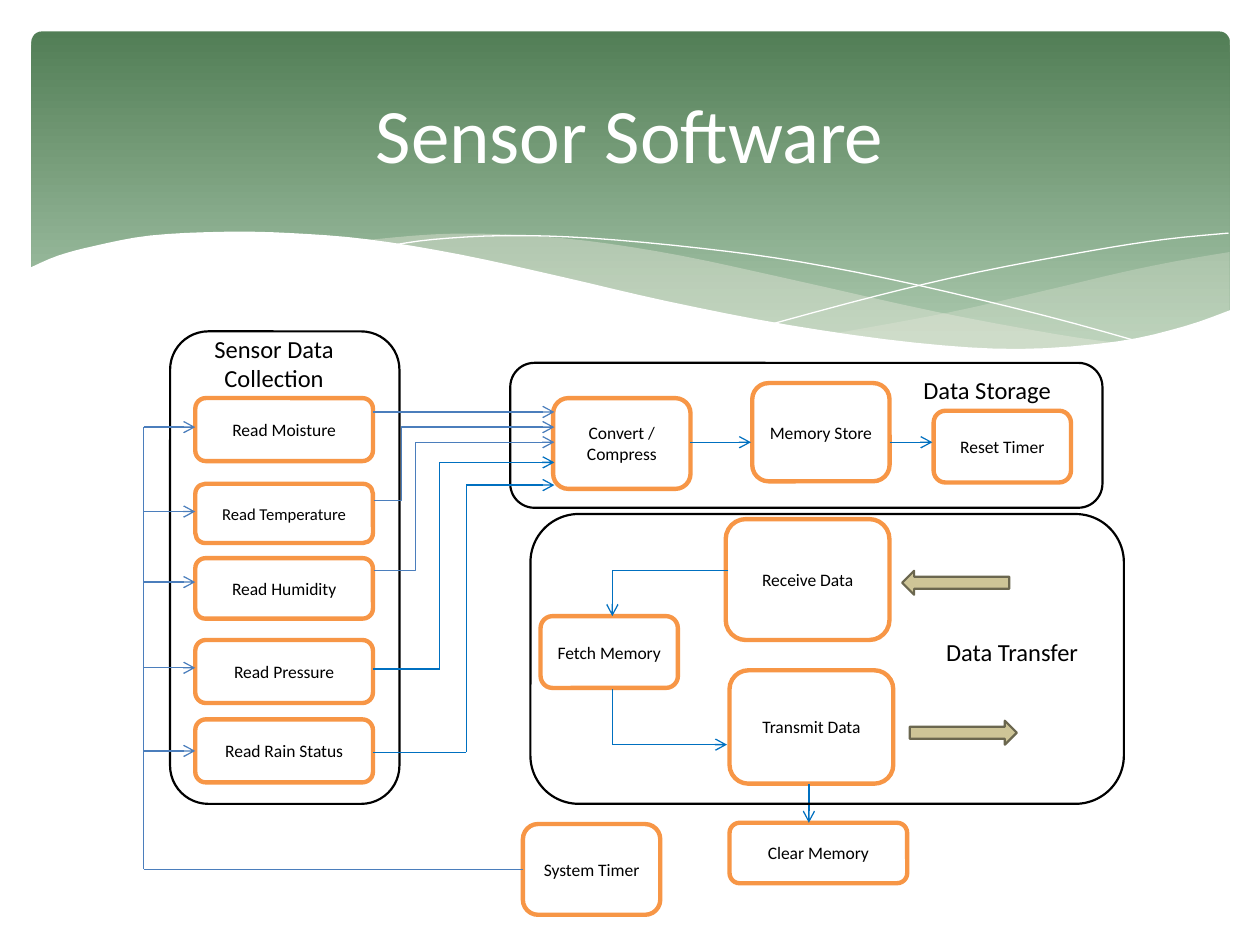
from lxml import etree
from pptx import Presentation
from pptx.dml.color import RGBColor
from pptx.enum.shapes import MSO_CONNECTOR, MSO_SHAPE
from pptx.enum.text import MSO_ANCHOR, MSO_AUTO_SIZE, PP_ALIGN
from pptx.oxml.ns import qn
from pptx.util import Inches, Pt

ROUNDED, ARROW = MSO_SHAPE.ROUNDED_RECTANGLE, MSO_SHAPE.RIGHT_ARROW
STRAIGHT, ELBOW = MSO_CONNECTOR.STRAIGHT, MSO_CONNECTOR.ELBOW
MIDDLE, GROW = MSO_ANCHOR.MIDDLE, MSO_AUTO_SIZE.SHAPE_TO_FIT_TEXT
CENTER, LEFT = PP_ALIGN.CENTER, PP_ALIGN.LEFT

WHITE = RGBColor(0xFF, 0xFF, 0xFF)
BLACK = RGBColor(0, 0, 0)
DARK_GREEN = RGBColor(0x52, 0x7E, 0x56)
LIGHT_GREEN = RGBColor(0xAA, 0xC8, 0xAD)
MIST = RGBColor(0xEA, 0xEB, 0xDE)
ORANGE = RGBColor(0xF7, 0x96, 0x46)
STEEL = RGBColor(0x4B, 0x7E, 0xBC)
BLUE = RGBColor(0, 0x70, 0xC0)
SAND = RGBColor(0xCE, 0xC5, 0x97)
OLIVE = RGBColor(0x6B, 0x67, 0x4F)

# Edges of the header waves, as knots of smooth curves
PALE_TOP = [(9.76, 2), (9.35, 2.07), (8.91, 2.16), (8.32, 2.3), (7.53, 2.48), (6.61, 2.65)]
PALE_BOTTOM = [(6.61, 2.65), (7.05, 2.71), (7.57, 2.76), (8.14, 2.78), (8.63, 2.75),
               (9.05, 2.69), (9.42, 2.59), (9.76, 2.47)]
BROAD_TOP = [(8.93, 2.73), (8.37, 2.65), (7.41, 2.47), (6.29, 2.22), (5.41, 2.03),
             (4.65, 1.91), (3.99, 1.86), (3.44, 1.86), (2.86, 1.91)]
BROAD_BOTTOM = [(2.86, 1.91), (3.62, 2.03), (4.49, 2.22), (5.3, 2.4), (6.18, 2.58),
                (6.95, 2.7), (7.61, 2.77), (8.28, 2.78), (8.93, 2.73)]
FALLING = [(3.09, 1.95), (3.44, 1.9), (4.01, 1.87), (4.69, 1.89), (5.56, 1.97),
           (6.36, 2.08), (7.27, 2.26), (8.31, 2.51), (9.07, 2.72)]
RISING = [(6.13, 2.57), (6.95, 2.35), (7.76, 2.16), (8.66, 1.99), (9.24, 1.9), (9.75, 1.85)]
PAGE_EDGE = [(9.77, 2.46), (9.4, 2.59), (8.87, 2.71), (8.09, 2.77), (7.26, 2.72),
             (6.26, 2.58), (5.29, 2.39), (4.47, 2.2), (3.65, 2.02), (2.92, 1.9),
             (2.3, 1.85), (1.77, 1.84), (1.19, 1.87), (0.76, 1.95), (0.46, 2.03), (0.23, 2.13)]


def smooth(knots, steps=4):
    """Catmull-Rom curve through the knots."""
    ends = [knots[0], *knots, knots[-1]]
    curve = [knots[0]]
    for a, b, c, d in zip(ends, ends[1:], ends[2:], ends[3:]):
        for step in range(1, steps + 1):
            t = step / steps
            curve.append(tuple(
                (2 * q + (r - p) * t + (2 * p - 5 * q + 4 * r - s) * t ** 2
                 + (3 * q - p - 3 * r + s) * t ** 3) / 2
                for p, q, r, s in zip(a, b, c, d)))
    return curve


def add_wave(slide, box, points, fill=None, opacity=100):
    points = [(Inches(x), Inches(y)) for x, y in points]
    builder = slide.shapes.build_freeform(*points[0], scale=1.0)
    builder.add_line_segments(points[1:], close=fill is not None)
    wave = builder.convert_to_shape(Inches(box[0]), Inches(box[1]))
    wave.shadow.inherit = False
    if fill is None:
        wave.fill.background()
        wave.line.color.rgb = WHITE
        wave.line.width = Pt(0)
        return
    wave.fill.solid()
    wave.fill.fore_color.rgb = fill
    wave.line.fill.background()
    if opacity < 100:
        color = wave.fill._xPr.find(".//" + qn("a:srgbClr"))
        etree.SubElement(color, qn("a:alpha"), val=str(opacity * 1000))


def add_block(slide, box, left, top, width, height, fill, line, weight, kind=ROUNDED):
    block = slide.shapes.add_shape(kind, Inches(box[0] + left), Inches(box[1] + top),
                                   Inches(width), Inches(height))
    block.shadow.inherit = False
    if fill is None:
        block.fill.background()
    else:
        block.fill.solid()
        block.fill.fore_color.rgb = fill
    block.line.color.rgb = line
    block.line.width = Pt(weight)
    return block


def write(frame, text, size, color, align=CENTER):
    frame.text = text
    for paragraph in frame.paragraphs:
        paragraph.alignment = align
        paragraph.font.name = "Calibri"
        paragraph.font.size = Pt(size)
        paragraph.font.color.rgb = color


def add_step(slide, box, text, left, top, width=1.09, height=0.72, size=10):
    step = add_block(slide, box, left, top, width, height, WHITE, ORANGE, 2.5)
    step.text_frame.vertical_anchor = MIDDLE
    write(step.text_frame, text, size, BLACK)


def add_frame(slide, box):
    add_block(slide, box, 0, 0, box[2], box[3], None, BLACK, 1.25)


def add_label(slide, box, text, left, top, width, height=0.34, align=LEFT):
    label = slide.shapes.add_textbox(Inches(box[0] + left), Inches(box[1] + top),
                                     Inches(width), Inches(height))
    label.text_frame.word_wrap = False
    label.text_frame.auto_size = GROW
    write(label.text_frame, text, 14, BLACK, align)


def add_link(slide, box, start, end, color, arrow=True, bend=None):
    ends = [Inches(box[i] + point[i]) for point in (start, end) for i in (0, 1)]
    link = slide.shapes.add_connector(STRAIGHT if bend is None else ELBOW, *ends)
    link.line.color.rgb = color
    link.line.width = Pt(0.75)
    properties = link._element.spPr
    if arrow:
        etree.SubElement(link.line._get_or_add_ln(), qn("a:tailEnd"), type="arrow")
    etree.SubElement(properties, qn("a:effectLst"))
    if bend is not None:
        guides = properties.find(qn("a:prstGeom")).get_or_add_avLst()
        etree.SubElement(guides, qn("a:gd"), name="adj1", fmla=f"val {round(bend * 100000)}")


def add_route(slide, box, points, color, arrow=True):
    """Straight links from point to point, with the arrowhead on the last."""
    for i in range(1, len(points)):
        add_link(slide, box, points[i - 1], points[i], color, arrow and i == len(points) - 1)


def draw_header(slide, box):
    banner = add_block(slide, box, 0.25, 0.25, 9.51, 2.7, WHITE, WHITE, 0)
    banner.adjustments[0] = 0.03
    banner.line.fill.background()
    banner.fill.gradient()
    banner.fill.gradient_angle = 270
    for stop, place, color in zip(banner.fill.gradient_stops, (0, 0.9), (DARK_GREEN, LIGHT_GREEN)):
        stop.position = place
        stop.color.rgb = color
    add_wave(slide, box, smooth(PALE_TOP) + smooth(PALE_BOTTOM), MIST, 29)
    add_wave(slide, box, smooth(BROAD_TOP) + smooth(BROAD_BOTTOM), MIST, 40)
    add_wave(slide, box, smooth(FALLING))
    add_wave(slide, box, smooth(RISING))
    add_wave(slide, box, smooth(PAGE_EDGE) + [(0.23, 3.29), (9.77, 3.29)], WHITE)
    title = slide.shapes.add_textbox(Inches(box[0] + 0.5), Inches(box[1] + 0.37),
                                     Inches(9), Inches(1.37))
    title.text_frame.word_wrap = True
    title.text_frame.vertical_anchor = MIDDLE
    write(title.text_frame, "Sensor Software", 44, WHITE)


def draw_collection(slide, box):
    for text, top, height, size in [
            ("Read Moisture", 0.53, 0.5, 10), ("Read Temperature", 1.21, 0.47, 9.5),
            ("Read Humidity", 1.8, 0.48, 10), ("Read Pressure", 2.45, 0.5, 10),
            ("Read Rain Status", 3.08, 0.5, 10)]:
        add_step(slide, box, text, 0.2, top, 1.41, height, size)
    add_frame(slide, box)
    add_label(slide, box, "Sensor Data\nCollection", 0.2, -0.03, 1.25, 0.57, CENTER)


def draw_storage(slide, box):
    add_step(slide, box, "Convert / Compress", 0.34, 0.28)
    add_step(slide, box, "Memory Store", 1.92, 0.16, height=0.78)
    add_step(slide, box, "Reset Timer", 3.36, 0.38, height=0.57)
    for start, end in [(1.43, 1.91), (3.01, 3.35)]:
        add_link(slide, box, (start, 0.63), (end, 0.63), BLUE)
    add_frame(slide, box)
    add_label(slide, box, "Data Storage", 3.18, 0.05, 1.29)


def draw_transfer(slide, box):
    add_step(slide, box, "Receive Data", 1.55, 0.04, 1.3, 0.96)
    add_step(slide, box, "Fetch Memory", 0.08, 0.81, height=0.57)
    add_step(slide, box, "Transmit Data", 1.58, 1.24, 1.3, 0.9)
    add_step(slide, box, "Clear Memory", 1.58, 2.45, 1.41, 0.48)
    add_route(slide, box, [(1.57, 0.45), (0.65, 0.45), (0.65, 0.81)], BLUE)
    add_route(slide, box, [(0.65, 1.39), (0.65, 1.83), (1.56, 1.83)], BLUE)
    add_link(slide, box, (2.21, 2.14), (2.21, 2.45), BLUE)
    for left, top, turn in [(2.95, 0.45, 180), (3.01, 1.64, 0)]:
        add_block(slide, box, left, top, 0.85, 0.19, SAND, OLIVE, 1.25, ARROW).rotation = turn
    add_frame(slide, box)
    add_label(slide, box, "Data Transfer", 3.2, 0.93, 1.32)


def draw_readings(slide, box):
    """Links from the sensors to the converter."""
    right = box[2]
    add_link(slide, box, (0, 0), (right, 0), STEEL)
    add_link(slide, box, (0.01, 0.7), (right, 0.12), STEEL, bend=0.15)
    add_link(slide, box, (0.01, 1.26), (right, 0.24), STEEL, bend=0.23)
    for start, turn, end in [(2.04, 0.53, 0.4), (2.7, 0.74, 0.58)]:
        add_route(slide, box, [(0, start), (turn, start), (turn, end), (right, end)], BLUE)


def draw_timer(slide, box):
    add_step(slide, box, "System Timer", 3.01, 3.15)
    add_route(slide, box, [(3.01, 3.51), (0, 3.51), (0, 0)], STEEL, arrow=False)
    for y in (0, 0.67, 1.23, 1.91, 2.57):
        add_link(slide, box, (0, y), (0.41, y), STEEL)


def main():
    deck = Presentation()
    deck.slide_width, deck.slide_height = Inches(10), Inches(7.5)
    slide = deck.slides.add_slide(deck.slide_layouts[6])
    # Boxes are left, top, width, height in inches
    draw_header(slide, (0, 0, 10, 3.29))
    draw_collection(slide, (1.35, 2.63, 1.82, 3.75))
    draw_storage(slide, (4.05, 2.88, 4.7, 1.15))
    draw_transfer(slide, (4.21, 4.08, 4.71, 2.3))
    draw_readings(slide, (2.96, 3.27, 1.44, 2.7))
    draw_timer(slide, (1.14, 3.39, 4.1, 3.87))
    deck.save("out.pptx")


if __name__ == "__main__":
    main()
